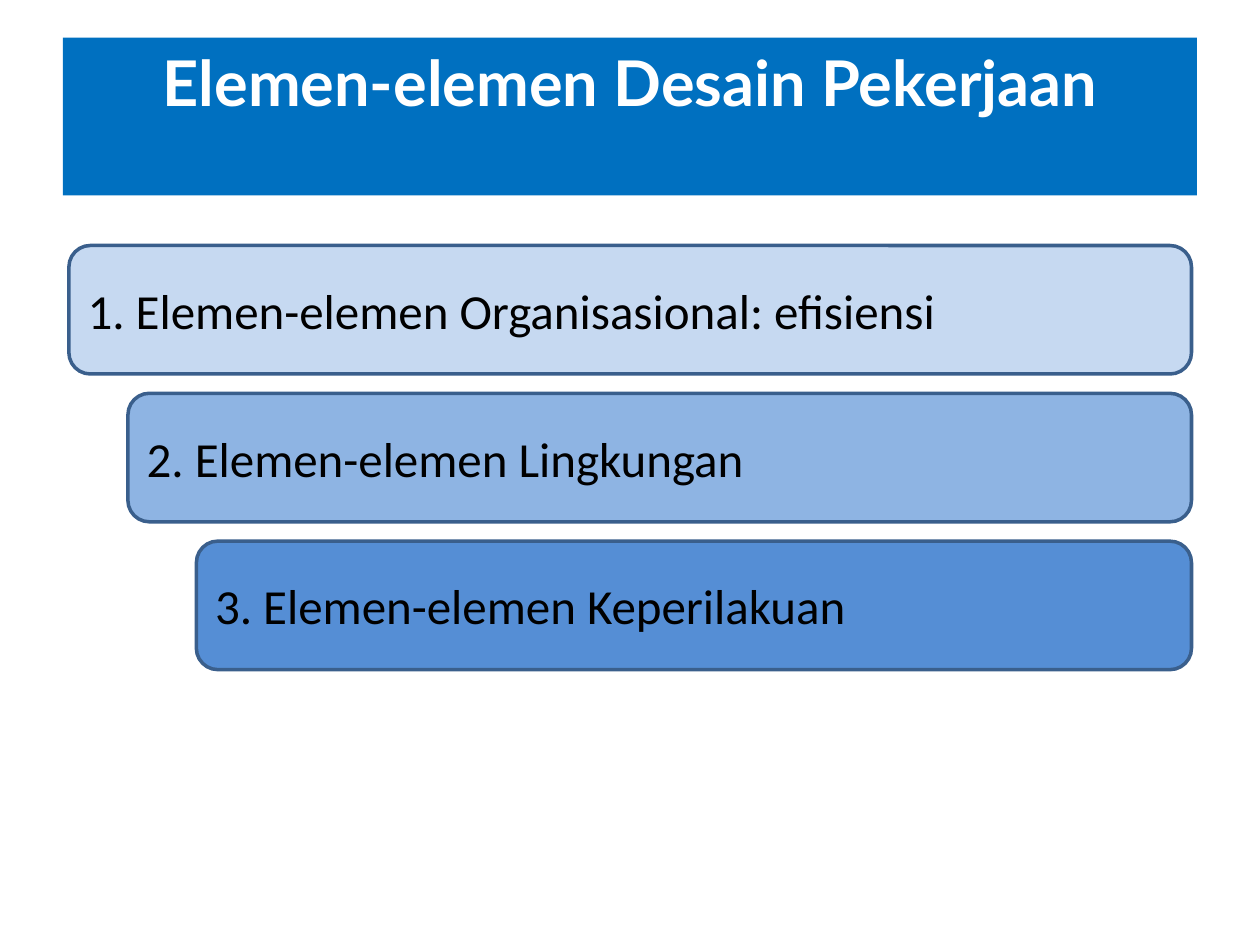
from pptx import Presentation
from pptx.dml.color import RGBColor
from pptx.enum.shapes import MSO_SHAPE
from pptx.enum.text import MSO_ANCHOR, PP_ALIGN
from pptx.util import Cm, Pt

RECT, ROUND = MSO_SHAPE.RECTANGLE, MSO_SHAPE.ROUNDED_RECTANGLE
TOP, MIDDLE = MSO_ANCHOR.TOP, MSO_ANCHOR.MIDDLE
LEFT, CENTER = PP_ALIGN.LEFT, PP_ALIGN.CENTER

COLORS = {
    "title": "0070C0",
    "light": "C6D9F1",
    "mid": "8EB4E3",
    "deep": "558ED5",
    "edge": "3A5F8C",
    "white": "FFFFFF",
    "black": "000000",
}

# Text, fill and indent (cm) of each step
STEPS = [
    ("1. Elemen-elemen Organisasional: efisiensi", "light", 0),
    ("2. Elemen-elemen Lingkungan", "mid", 1.19),
    ("3. Elemen-elemen Keperilakuan", "deep", 2.57),
]


def color(name):
    return RGBColor.from_string(COLORS[name])


def add_box(slide, kind, box, fill, edge=None):
    shape = slide.shapes.add_shape(kind, *(Cm(n) for n in box))
    shape.shadow.inherit = False
    shape.fill.solid()
    shape.fill.fore_color.rgb = color(fill)
    if edge:
        shape.line.color.rgb = color(edge)
        shape.line.width = Pt(2)
    else:
        shape.line.fill.background()
    return shape


def put_text(shape, text, font="Calibri", size=28, ink="black", bold=False,
             align=LEFT, anchor=MIDDLE):
    frame = shape.text_frame
    frame.word_wrap = True
    frame.vertical_anchor = anchor
    para = frame.paragraphs[0]
    para.alignment = align
    run = para.add_run()
    run.text = text
    run.font.name = font
    run.font.size = Pt(size)
    run.font.bold = bold
    run.font.color.rgb = color(ink)


def add_title(slide, box):
    shape = add_box(slide, RECT, box, "title")
    put_text(shape, "Elemen-elemen Desain Pekerjaan", font="Lato", size=36,
             ink="white", bold=True, align=CENTER, anchor=TOP)


def add_steps(slide, box, gap=0.39):
    left, top, width, height = box
    tall = (height - gap * (len(STEPS) - 1)) / len(STEPS)
    for i, (text, fill, indent) in enumerate(STEPS):
        # Bars share their right edge
        place = (left + indent, top + i * (tall + gap), width - indent, tall)
        shape = add_box(slide, ROUND, place, fill, edge="edge")
        put_text(shape, text)


def main():
    deck = Presentation()
    deck.slide_width, deck.slide_height = Cm(25.4), Cm(19.05)
    slide = deck.slides.add_slide(deck.slide_layouts[6])
    add_title(slide, (1.27, 0.76, 22.86, 3.18))
    add_steps(slide, (1.39, 4.95, 22.63, 8.55))
    deck.save("out.pptx")


if __name__ == "__main__":
    main()
